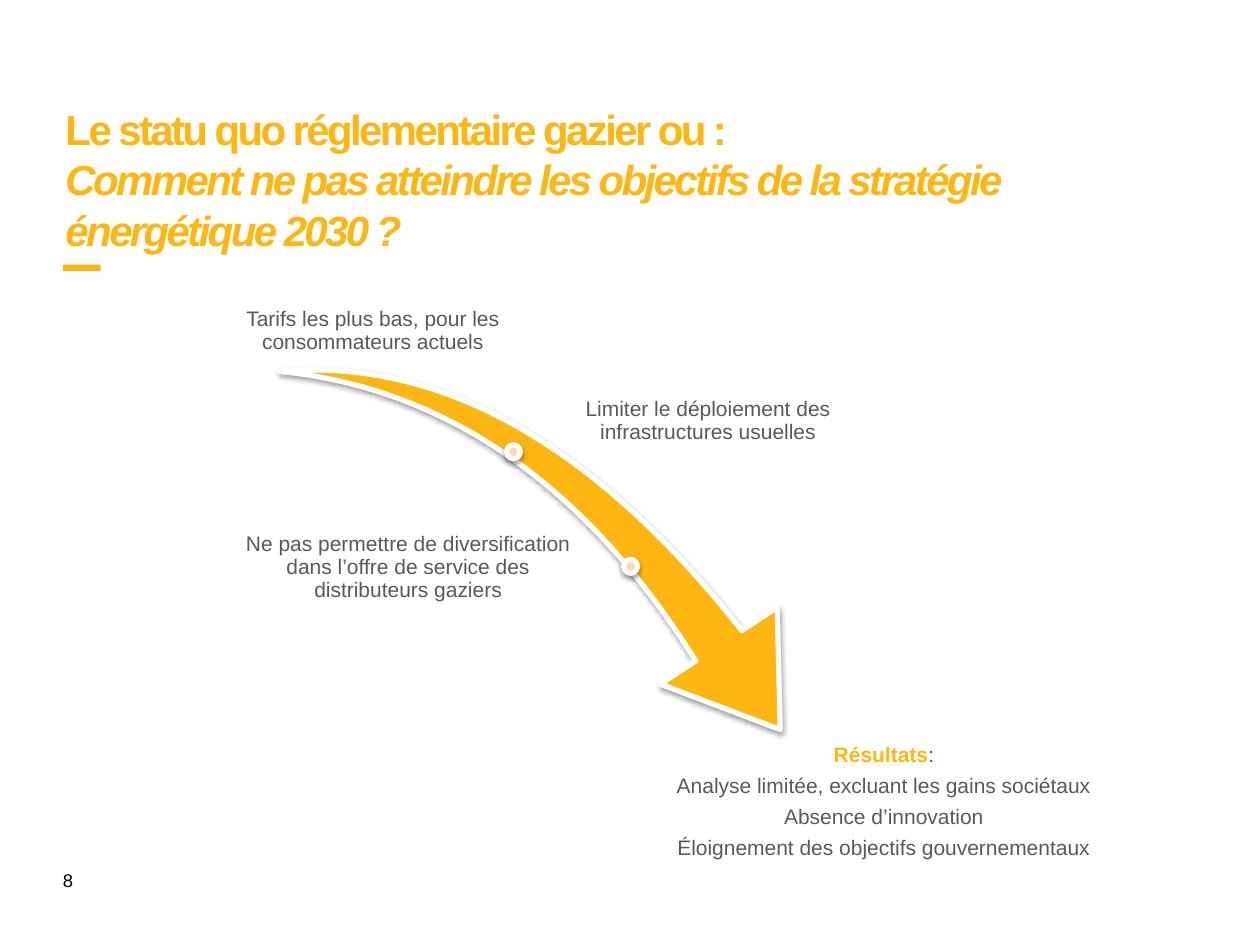
from typing import NamedTuple

from lxml import etree
from pptx import Presentation
from pptx.dml.color import RGBColor
from pptx.enum import shapes, text
from pptx.oxml.ns import qn
from pptx.util import Inches, Pt

YELLOW = RGBColor(0xFF, 0xB6, 0x12)
PEACH = RGBColor(0xFF, 0xD7, 0xAB)
GREY = RGBColor(0x59, 0x59, 0x59)
BLACK = RGBColor(0, 0, 0)
WHITE = RGBColor(0xFF, 0xFF, 0xFF)
SHAPE = shapes.MSO_SHAPE
ANCHOR = text.MSO_ANCHOR
ALIGN = text.PP_ALIGN


class Box(NamedTuple):
    left: float
    top: float
    width: float
    height: float


class Run(NamedTuple):
    text: str
    color: RGBColor = GREY
    bold: bool = False
    italic: bool = False


class Label(NamedTuple):
    box: Box
    anchor: ANCHOR
    paragraphs: list[list[Run]]


LABELS = [
    Label(Box(1.79, 2.03, 2.34, 0.8), ANCHOR.BOTTOM,
          [[Run("Tarifs les plus bas, pour les consommateurs actuels")]]),
    Label(Box(4.46, 3.04, 2.32, 0.61), ANCHOR.MIDDLE,
          [[Run("Limiter le déploiement des infrastructures usuelles")]]),
    Label(Box(1.89, 4.11, 2.7, 0.79), ANCHOR.MIDDLE,
          [[Run("Ne pas permettre de diversification dans l’offre de service "
                "des distributeurs gaziers")]]),
    Label(Box(4.97, 5.89, 4.09, 1.33), ANCHOR.TOP,
          [[Run("Résultats", YELLOW, bold=True), Run(":")],
           [Run("Analyse limitée, excluant les gains sociétaux")],
           [Run("Absence d’innovation")],
           [Run("Éloignement des objectifs gouvernementaux")]]),
]
TITLE = [
    Run("Le statu quo réglementaire gazier ou :\n", YELLOW, bold=True),
    Run("Comment ne pas atteindre les objectifs de la stratégie énergétique 2030 ?",
        YELLOW, bold=True, italic=True),
]
DOTS = [Box(4.02, 3.53, 0.11, 0.11), Box(4.95, 4.44, 0.11, 0.11)]


def add_text(s, box: Box, paragraphs: list[list[Run]], *, size: float,
             anchor=ANCHOR.TOP, align=ALIGN.LEFT, inset_x: float = 0.1,
             inset_y: float = 0.05, line_spacing: float = 1.0,
             space_after: float = 0, tracking: float = 0):
    tf = s.shapes.add_textbox(*map(Inches, box)).text_frame
    tf.word_wrap = True
    tf.vertical_anchor = anchor
    tf.margin_left = tf.margin_right = Inches(inset_x)
    tf.margin_top = tf.margin_bottom = Inches(inset_y)
    for i, runs in enumerate(paragraphs):
        p = tf.add_paragraph() if i else tf.paragraphs[0]
        p.alignment = align
        p.line_spacing = line_spacing
        p.space_after = Pt(space_after)
        for run in runs:
            r = p.add_run()
            r.text = run.text.rstrip("\n")
            r.font.name = "Arial"
            r.font.size = Pt(size)
            r.font.bold = run.bold
            r.font.italic = run.italic
            r.font.color.rgb = run.color
            if tracking:
                r.font._element.set("spc", str(round(tracking * 100)))
            if run.text.endswith("\n"):
                p.add_line_break()


def add_shadow(sp):
    effects = sp._element.spPr.find(qn("a:effectLst"))
    shadow = etree.SubElement(effects, qn("a:outerShdw"), blurRad=str(Pt(3.1)),
                              dist=str(Pt(1.6)), dir="5400000", rotWithShape="0")
    color = etree.SubElement(shadow, qn("a:srgbClr"), val="000000")
    etree.SubElement(color, qn("a:alpha"), val="38000")


def add_shape(s, kind: SHAPE, box: Box, fill: RGBColor, outlined: bool = True):
    sp = s.shapes.add_shape(kind, *map(Inches, box))
    sp.fill.solid()
    sp.fill.fore_color.rgb = fill
    sp.shadow.inherit = False
    if outlined:
        sp.line.color.rgb = WHITE
        sp.line.width = Pt(3)
        add_shadow(sp)
    else:
        sp.line.fill.background()
    return sp


def main():
    prs = Presentation()
    prs.slide_width, prs.slide_height = Inches(10), Inches(7.5)
    s = prs.slides.add_slide(prs.slide_layouts[6])

    add_text(s, Box(0.4, 6.85, 0.39, 0.28), [[Run("8", BLACK)]], size=10.5)
    add_shape(s, SHAPE.RECTANGLE, Box(0.5, 2.1, 0.3, 0.05), YELLOW, outlined=False)
    add_text(s, Box(0.52, 1.2, 9, 0.44), [TITLE], size=24, anchor=ANCHOR.MIDDLE,
             inset_x=0, tracking=-1.5)

    arrow = add_shape(s, SHAPE.SWOOSH_ARROW, Box(2.23, 2.94, 4.33, 2.67), YELLOW)
    arrow.rotation = 63.1
    arrow.adjustments[0] = 0.163
    arrow.adjustments[1] = 0.314
    for dot in DOTS:
        add_shape(s, SHAPE.OVAL, dot, PEACH)

    for label in LABELS:
        add_text(s, label.box, label.paragraphs, size=12, anchor=label.anchor,
                 align=ALIGN.CENTER, inset_x=0.02, inset_y=0.02,
                 line_spacing=0.9, space_after=4.7)

    prs.save("out.pptx")


if __name__ == "__main__":
    main()
